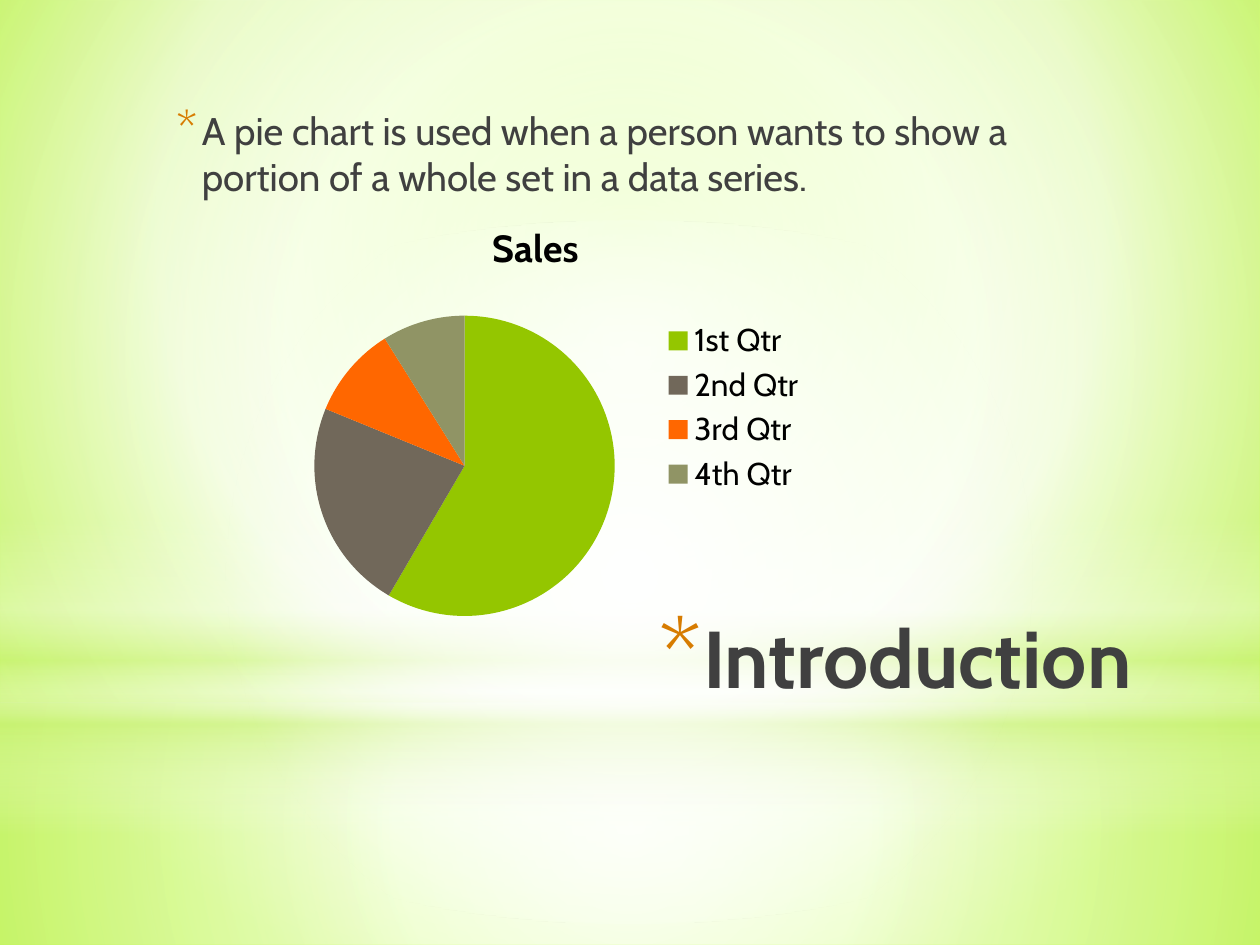
from lxml.etree import SubElement
from pptx import Presentation
from pptx.chart.data import CategoryChartData
from pptx.dml.color import RGBColor
from pptx.enum.chart import XL_CHART_TYPE as ChartType, XL_LEGEND_POSITION as LegendPosition
from pptx.enum.shapes import MSO_SHAPE as Shape
from pptx.enum.text import MSO_ANCHOR as Anchor, PP_ALIGN as Align
from pptx.oxml.ns import qn
from pptx.util import Cm, Pt

FONT = "Cabin"
WHITE = RGBColor(0xFF, 0xFF, 0xFF)
BLACK = RGBColor(0x00, 0x00, 0x00)
CHARCOAL = RGBColor(0x40, 0x40, 0x40)
AMBER = RGBColor(0xD7, 0x7C, 0x01)
LIME = RGBColor(0xCA, 0xF2, 0x78)
BACK_CENTRE = RGBColor(0xCA, 0xFF, 0x60)
BACK_PALE = RGBColor(0xF7, 0xFF, 0xE7)
BACK_EDGE = RGBColor(0xB7, 0xFF, 0x29)
QUARTERS = {
    "1st Qtr": (59, RGBColor(0x94, 0xC6, 0x00)),
    "2nd Qtr": (23, RGBColor(0x71, 0x68, 0x5A)),
    "3rd Qtr": (10, RGBColor(0xFF, 0x67, 0x00)),
    "4th Qtr": (9, RGBColor(0x90, 0x94, 0x65)),
}
CENTRE = (50, 50, 50, 50)
SLIDE_WIDTH, SLIDE_HEIGHT = 25.4, 19.05
HORIZON = 14.17


def paint_gradient(fill, owner, stops, focus=None):
    fill.gradient()
    gradient = owner.find(".//" + qn("a:gradFill"))
    for child in list(gradient):
        gradient.remove(child)
    stop_list = SubElement(gradient, qn("a:gsLst"))
    for position, color, opacity in stops:
        stop = SubElement(stop_list, qn("a:gs"), pos=str(position * 1000))
        tint = SubElement(stop, qn("a:srgbClr"), val=str(color))
        if opacity < 100:
            SubElement(tint, qn("a:alpha"), val=str(opacity * 1000))
    if focus:
        radial = SubElement(gradient, qn("a:path"), {"path": "circle"})
        SubElement(radial, qn("a:fillToRect"),
                   {side: str(value * 1000) for side, value in zip("ltrb", focus)})
    else:
        SubElement(gradient, qn("a:lin"), ang="5400000", scaled="0")


def add_glow(slide, outline, top, height, stops, focus=None):
    glow = slide.shapes.add_shape(outline, 0, Cm(top), Cm(SLIDE_WIDTH), Cm(height))
    glow.shadow.inherit = False
    glow.line.fill.background()
    paint_gradient(glow.fill, glow.element, stops, focus)


def add_starred_text(slide, box, words, size, indent, hang, star_size,
                     bold=False, align=Align.LEFT):
    frame = slide.shapes.add_textbox(*map(Cm, box)).text_frame
    frame.word_wrap = True
    frame.vertical_anchor = Anchor.TOP
    paragraph = frame.paragraphs[0]
    paragraph.alignment = align
    run = paragraph.add_run()
    run.text = words
    run.font.name = FONT
    run.font.size = Pt(size)
    run.font.bold = bold
    run.font.color.rgb = CHARCOAL
    properties = paragraph._p.get_or_add_pPr()
    properties.set("marL", str(Cm(indent)))
    properties.set("indent", str(-Cm(hang)))
    star_color = SubElement(properties, qn("a:buClr"))
    SubElement(star_color, qn("a:srgbClr"), val=str(AMBER))
    SubElement(properties, qn("a:buSzPct"), val=str(star_size * 1000))
    SubElement(properties, qn("a:buFont"), typeface=FONT)
    SubElement(properties, qn("a:buChar"), char="*")
    return paragraph


def place_plot(chart, x, y, width, height):
    plot_area = chart.element.find(".//" + qn("c:plotArea"))
    layout = plot_area.find(qn("c:layout"))
    if layout is None:
        layout = SubElement(plot_area, qn("c:layout"))
        plot_area.insert(0, layout)
    manual = SubElement(layout, qn("c:manualLayout"))
    settings = {"layoutTarget": "inner", "xMode": "edge", "yMode": "edge",
                "x": x, "y": y, "w": width, "h": height}
    for name, value in settings.items():
        SubElement(manual, qn("c:" + name), val=str(value))


def add_sales_pie(slide):
    sales = CategoryChartData()
    sales.categories = list(QUARTERS)
    sales.add_series("Sales", [value for value, _ in QUARTERS.values()])
    chart = slide.shapes.add_chart(
        ChartType.PIE, Cm(5.08), Cm(4.01), Cm(11.43), Cm(8.41), sales).chart
    chart.font.name = FONT
    chart.font.size = Pt(18)
    chart.font.color.rgb = BLACK
    chart.has_title = True
    heading = chart.chart_title.text_frame.paragraphs[0].add_run()
    heading.text = "Sales"
    heading.font.name = FONT
    heading.font.size = Pt(21.6)
    heading.font.bold = True
    heading.font.color.rgb = BLACK
    chart.has_legend = True
    chart.legend.position = LegendPosition.RIGHT
    chart.legend.include_in_layout = False
    pie = chart.plots[0]
    pie.vary_by_categories = True
    for index, (_, color) in enumerate(QUARTERS.values()):
        slice_fill = pie.series[0].points[index].format.fill
        slice_fill.solid()
        slice_fill.fore_color.rgb = color
    place_plot(chart, 0.04, 0.28, 0.67, 0.72)


def add_backdrop(slide):
    paint_gradient(slide.background.fill, slide.element,
                   [(0, BACK_CENTRE, 100), (60, BACK_PALE, 100), (100, BACK_EDGE, 100)],
                   (20, 10, 20, 60))
    add_glow(slide, Shape.RECTANGLE, HORIZON, SLIDE_HEIGHT - HORIZON,
             [(0, WHITE, 91), (37, WHITE, 76), (100, LIME, 79)], CENTRE)
    add_glow(slide, Shape.RECTANGLE, 0, HORIZON,
             [(0, WHITE, 89), (48, WHITE, 62), (100, LIME, 79)], CENTRE)
    add_glow(slide, Shape.RECTANGLE, 10.46, 6.35,
             [(0, WHITE, 0), (29, WHITE, 30), (45, LIME, 40),
              (55, WHITE, 26), (65, LIME, 60), (100, WHITE, 0)])
    add_glow(slide, Shape.OVAL, 4.45, HORIZON,
             [(0, WHITE, 100), (56, WHITE, 0)], CENTRE)


def main():
    deck = Presentation()
    deck.slide_width, deck.slide_height = Cm(SLIDE_WIDTH), Cm(SLIDE_HEIGHT)
    slide = deck.slides.add_slide(deck.slide_layouts[6])
    add_backdrop(slide)
    add_starred_text(slide, (4.98, 12.14, 18.08, 3.18), "Introduction", 46,
                     0.89, 0.89, 128, bold=True, align=Align.RIGHT)
    explanation = add_starred_text(
        slide, (3.18, 2.03, 17.78, 9.65),
        "A pie chart is used when a person wants to show a portion of a whole "
        "set in a data series.", 22, 0.64, 0.51, 130)
    explanation.space_after = Pt(3)
    add_sales_pie(slide)
    deck.save("out.pptx")


if __name__ == "__main__":
    main()
